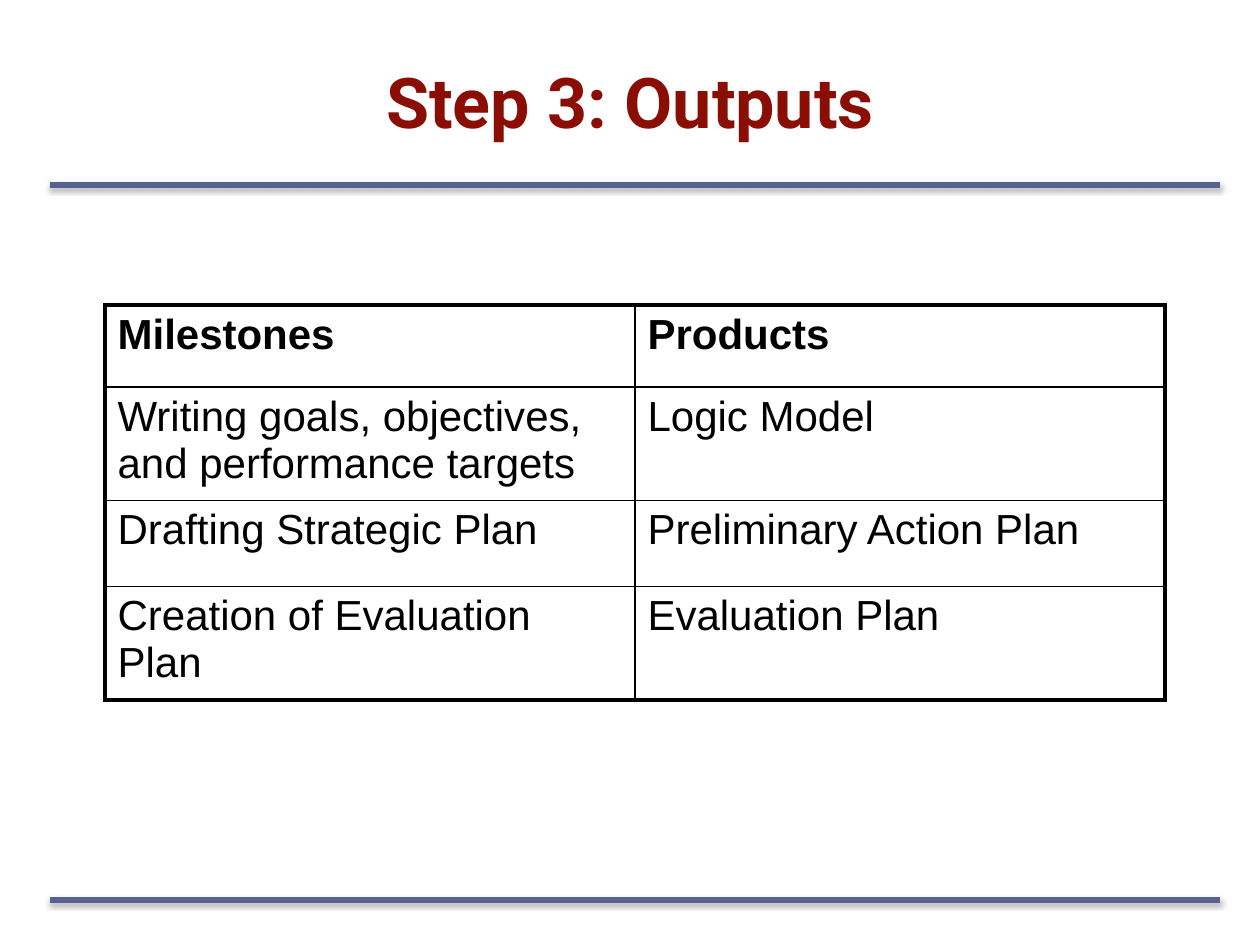
from lxml.etree import SubElement
from pptx import Presentation
from pptx.dml.color import RGBColor
from pptx.enum.shapes import MSO_CONNECTOR
from pptx.enum.text import MSO_ANCHOR, PP_ALIGN
from pptx.oxml import parse_xml
from pptx.oxml.ns import nsdecls, qn
from pptx.util import Emu, Pt

PX_PER_INCH = 126
BLACK = RGBColor(0x00, 0x00, 0x00)
DARK_RED = RGBColor(0x8B, 0x0E, 0x04)
SLATE_BLUE = RGBColor(0x55, 0x62, 0x92)

OUTER_BORDER = 2.25
INNER_BORDER = 1
ROW_HEIGHTS = [82, 106, 86, 106]
ROWS = [
    ("Milestones", "Products"),
    ("Writing goals, objectives, and performance targets", "Logic Model"),
    ("Drafting Strategic Plan", "Preliminary Action Plan"),
    ("Creation of Evaluation Plan", "Evaluation Plan"),
]


def px(length):
    return Emu(round(length * 914400 / PX_PER_INCH))


def write_text(text_frame, text, *, size, font="Arial", color=BLACK,
               bold=False, align=PP_ALIGN.LEFT):
    text_frame.word_wrap = True
    paragraph = text_frame.paragraphs[0]
    paragraph.alignment = align
    run = paragraph.add_run()
    run.text = text
    run.font.name = font
    run.font.size = Pt(size)
    run.font.bold = bold
    run.font.color.rgb = color


def add_title(slide, left, top, width, height):
    box = slide.shapes.add_textbox(px(left), px(top), px(width), px(height))
    box.text_frame.vertical_anchor = MSO_ANCHOR.MIDDLE
    write_text(box.text_frame, "Step 3: Outputs", size=40, font="Roboto",
               color=DARK_RED, bold=True, align=PP_ALIGN.CENTER)


def add_rule(slide, left, top, width):
    rule = slide.shapes.add_connector(
        MSO_CONNECTOR.STRAIGHT, px(left), px(top), px(left + width), px(top))
    rule.line.color.rgb = SLATE_BLUE
    rule.line.width = Pt(3.25)
    # Soft shadow straight below the line
    rule._element.spPr.append(parse_xml(
        f'<a:effectLst {nsdecls("a")}>'
        f'<a:outerShdw blurRad="{Pt(3.1)}" dist="{Pt(1.6)}" dir="5400000" '
        'rotWithShape="0"><a:srgbClr val="000000"><a:alpha val="38000"/>'
        '</a:srgbClr></a:outerShdw></a:effectLst>'))


def set_borders(cell, widths):
    properties = cell._tc.get_or_add_tcPr()
    for index, (side, width) in enumerate(widths.items()):
        line = SubElement(properties, qn(f"a:ln{side}"), w=str(Pt(width)))
        fill = SubElement(line, qn("a:solidFill"))
        SubElement(fill, qn("a:srgbClr"), val=str(BLACK))
        properties.insert(index, line)  # borders come before the fill


def add_outputs_table(slide, left, top, width):
    row_count, column_count = len(ROWS), len(ROWS[0])
    table = slide.shapes.add_table(
        row_count, column_count, px(left), px(top), px(width),
        px(sum(ROW_HEIGHTS))).table
    table.first_row = False
    table.horz_banding = False
    for column in table.columns:
        column.width = px(width // column_count)
    for row_index, texts in enumerate(ROWS):
        table.rows[row_index].height = px(ROW_HEIGHTS[row_index])
        for column_index, text in enumerate(texts):
            cell = table.cell(row_index, column_index)
            cell.fill.background()
            write_text(cell.text_frame, text, size=24, bold=row_index == 0)
            on_edge = {
                "L": column_index == 0,
                "R": column_index == column_count - 1,
                "T": row_index == 0,
                "B": row_index == row_count - 1,
            }
            set_borders(cell, {side: OUTER_BORDER if edge else INNER_BORDER
                               for side, edge in on_edge.items()})


def main():
    presentation = Presentation()
    presentation.slide_width = px(1260)
    presentation.slide_height = px(945)
    slide = presentation.slides.add_slide(presentation.slide_layouts[6])

    # Rules under the title and at the foot
    for top in (185, 900):
        add_rule(slide, 50, top, 1170)
    add_title(slide, 63, 38, 1134, 125)
    add_outputs_table(slide, 105, 305, 1060)

    presentation.save("out.pptx")


if __name__ == "__main__":
    main()
